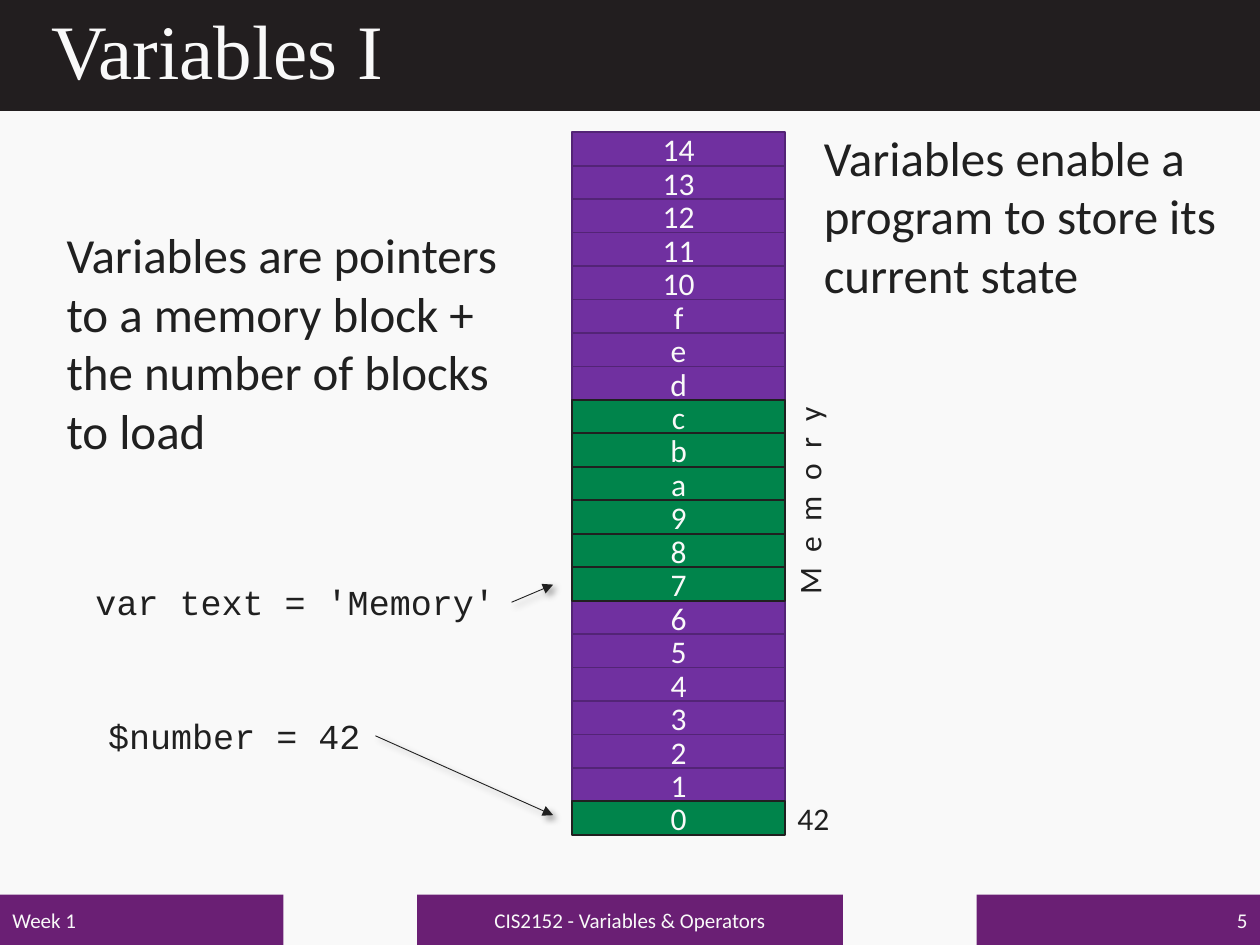
from lxml import etree
from pptx import Presentation
from pptx.dml.color import RGBColor
from pptx.enum.shapes import MSO_CONNECTOR as Connector, MSO_SHAPE as Shape
from pptx.enum.text import MSO_ANCHOR as Anchor, MSO_AUTO_SIZE as AutoSize, PP_ALIGN as Align
from pptx.oxml import parse_xml
from pptx.oxml.ns import nsdecls, qn
from pptx.util import Inches, Pt

PAPER = RGBColor(0xF9, 0xF9, 0xF9)
INK = RGBColor(0x20, 0x20, 0x20)
HEADER = RGBColor(0x22, 0x1E, 0x1F)
FOOTER = RGBColor(0x6A, 0x1F, 0x74)
FREE = RGBColor(0x70, 0x30, 0xA0)
FREE_EDGE = RGBColor(0x53, 0x24, 0x76)
USED = RGBColor(0x00, 0x84, 0x4B)

BODY, CODE, HEADING = "Calibri", "Courier New", "Times New Roman"

WIDTH, HEIGHT = 10, 7.5
MEMORY_LEFT, MEMORY_TOP, MEMORY_WIDTH = 4.54, 1.05, 1.69
LAST_ADDRESS, LAST_TOP, CELL_HEIGHT = 0x14, 6.36, 0.27
PITCH = (LAST_TOP - MEMORY_TOP) / LAST_ADDRESS
TEXT_ADDRESSES = range(0x7, 0xD)
NUMBER_ADDRESS = 0x0
ARROW_END = 4.39

SHADOW = (
    f'<a:effectLst {nsdecls("a")}><a:outerShdw blurRad="50800" dist="38100" dir="2700000">'
    '<a:srgbClr val="000000"><a:alpha val="40000"/></a:srgbClr></a:outerShdw></a:effectLst>'
)


def write(frame, text, size, color, font=BODY, align=Align.LEFT):
    paragraph = frame.paragraphs[0]
    paragraph.alignment = align
    run = paragraph.add_run()
    run.text = text
    run.font.size = Pt(size)
    run.font.name = font
    run.font.color.rgb = color
    return run


def add_block(shapes, box, fill, edge=None):
    block = shapes.add_shape(Shape.RECTANGLE, *map(Inches, box))
    block.shadow.inherit = False
    block.fill.solid()
    block.fill.fore_color.rgb = fill
    if edge is None:
        block.line.fill.background()
    else:
        block.line.color.rgb = edge
        block.line.width = Pt(1)
    block.text_frame.vertical_anchor = Anchor.MIDDLE
    return block


def add_cell(shapes, address, fill, edge):
    top = LAST_TOP - address * PITCH
    cell = add_block(shapes, (MEMORY_LEFT, top, MEMORY_WIDTH, CELL_HEIGHT), fill, edge)
    write(cell.text_frame, format(address, "x"), 18, PAPER, align=Align.CENTER)


def add_text(shapes, box, text, size, font=BODY, wrap=False):
    label = shapes.add_textbox(*map(Inches, box))
    label.text_frame.word_wrap = wrap
    label.text_frame.auto_size = AutoSize.SHAPE_TO_FIT_TEXT
    run = write(label.text_frame, text, size, INK, font)
    return label, run


def add_pointer(shapes, statement, end_y):
    start = statement.left + statement.width, statement.top + statement.height // 2
    pointer = shapes.add_connector(
        Connector.STRAIGHT, *start, Inches(ARROW_END), Inches(end_y)
    )
    pointer.begin_connect(statement, 3)
    pointer.line.color.rgb = INK
    pointer.line.width = Pt(0.5)
    etree.SubElement(pointer.line._get_or_add_ln(), qn("a:tailEnd"), type="triangle")
    pointer.element.spPr.append(parse_xml(SHADOW))


def add_variable(slide, statement_box, statement, end_y, addresses, value_box, value):
    shapes = slide.shapes.add_group_shape().shapes
    code, _ = add_text(shapes, statement_box, statement, 20, CODE)
    add_pointer(shapes, code, end_y)
    for address in reversed(addresses):
        add_cell(shapes, address, USED, INK)
    return add_text(shapes, value_box, value, 18)


def add_header(slide, text):
    title = slide.shapes.title
    bar = add_block(slide.shapes, (0, 0, WIDTH, 0.88), HEADER)
    title.element.addprevious(bar.element)
    title.left, title.top, title.width, title.height = map(Inches, (0.31, 0, 9.39, 0.86))
    title.text_frame.vertical_anchor = Anchor.MIDDLE
    write(title.text_frame, text, 44, PAPER, HEADING)
    title.text_frame.paragraphs[0].line_spacing = 0.9


def add_footer(slide):
    side, middle = 2.25, 3.38
    parts = (
        (0, side, "Week 1", Align.LEFT),
        ((WIDTH - middle) / 2, middle, "CIS2152 - Variables & Operators", Align.CENTER),
        (WIDTH - side, side, "5", Align.RIGHT),
    )
    for left, width, text, align in parts:
        bar = add_block(slide.shapes, (left, HEIGHT - 0.4, width, 0.4), FOOTER)
        write(bar.text_frame, text, 12, PAPER, align=align)


def add_free_memory(slide):
    for address in range(LAST_ADDRESS, NUMBER_ADDRESS, -1):
        if address not in TEXT_ADDRESSES:
            add_cell(slide.shapes, address, FREE, FREE_EDGE)


def main():
    deck = Presentation()
    deck.slide_width, deck.slide_height = Inches(WIDTH), Inches(HEIGHT)
    slide = deck.slides.add_slide(deck.slide_layouts[5])
    slide.background.fill.solid()
    slide.background.fill.fore_color.rgb = PAPER

    add_header(slide, "Variables I")
    add_footer(slide)
    add_free_memory(slide)
    add_text(
        slide.shapes, (0.43, 1.73, 3.63, 1.99),
        "Variables are pointers to a memory block + the number of blocks to load",
        28, wrap=True,
    )
    letters, letters_run = add_variable(
        slide, (0.66, 4.56, 3.4, 0.44), "var text = 'Memory'", 4.64,
        TEXT_ADDRESSES, (5.56, 3.76, 1.72, 0.4), "M e m o r y",
    )
    letters.rotation = 270
    letters_run.font._element.set("spc", "240")
    add_variable(
        slide, (0.76, 5.62, 2.22, 0.44), "$number = 42", 6.47,
        [NUMBER_ADDRESS], (6.23, 6.29, 0.46, 0.4), "42",
    )
    add_text(
        slide.shapes, (6.44, 0.96, 3.63, 1.51),
        "Variables enable a program to store its current state",
        28, wrap=True,
    )
    deck.save("out.pptx")


if __name__ == "__main__":
    main()
